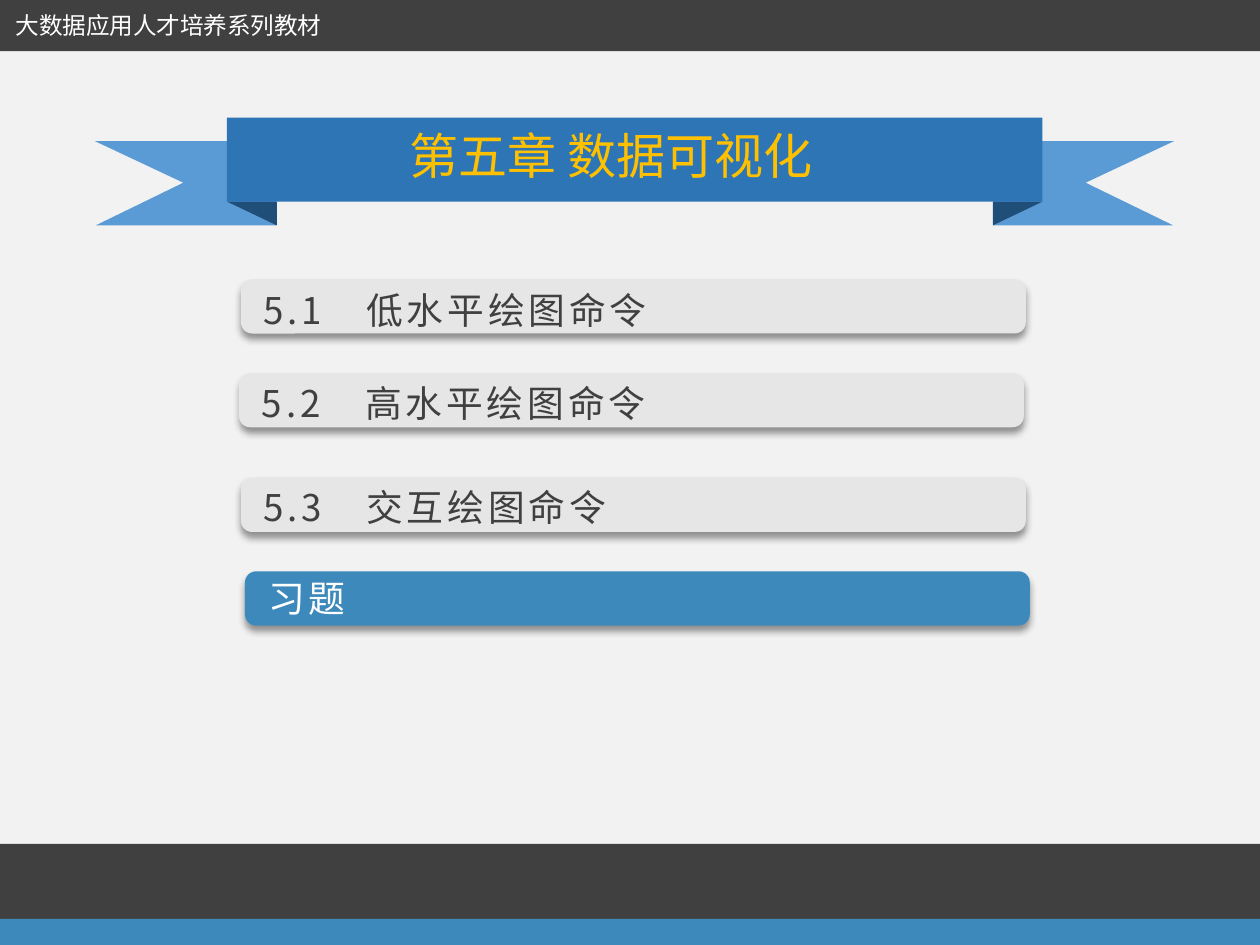
from lxml import etree
from pptx import Presentation
from pptx.dml.color import RGBColor
from pptx.enum.shapes import MSO_SHAPE
from pptx.enum.text import MSO_AUTO_SIZE, PP_ALIGN
from pptx.oxml.ns import qn
from pptx.util import Pt

RECTANGLE = MSO_SHAPE.RECTANGLE
ROUNDED = MSO_SHAPE.ROUNDED_RECTANGLE
TRIANGLE = MSO_SHAPE.RIGHT_TRIANGLE
FIT_TEXT = MSO_AUTO_SIZE.SHAPE_TO_FIT_TEXT
LEFT, CENTER = PP_ALIGN.LEFT, PP_ALIGN.CENTER
FONT = "Noto Sans CJK SC"
DARK, BLUE, GREY, WHITE = "404040", "3D89BC", "E6E6E6", "FFFFFF"


def paint(shape, color):
    shape.shadow.inherit = False
    shape.fill.solid()
    shape.fill.fore_color.rgb = RGBColor.from_string(color)
    shape.line.fill.background()
    return shape


def write(shapes, text, frame, size, color, align, spacing=0):
    box = shapes.add_textbox(*map(Pt, frame))
    box.text_frame.word_wrap = False
    box.text_frame.auto_size = FIT_TEXT
    paragraph = box.text_frame.paragraphs[0]
    paragraph.alignment = align
    run = paragraph.add_run()
    run.text = text
    for name, value in {"name": FONT, "size": Pt(size)}.items():
        setattr(run.font, name, value)
    run.font.color.rgb = RGBColor.from_string(color)
    properties = run.font._element
    etree.SubElement(properties, qn("a:ea"), typeface=FONT)
    if spacing:
        properties.set("spc", str(round(spacing * 100)))


deck = Presentation()
deck.slide_width, deck.slide_height = Pt(720), Pt(540)
slide = deck.slides.add_slide(deck.slide_layouts[6])
slide.background.fill.solid()
slide.background.fill.fore_color.rgb = RGBColor.from_string("F2F2F2")

ribbon = slide.shapes.add_group_shape().shapes
tail = [(54.4, 80.7), (157.7, 80.7), (157.7, 128.8), (54.7, 128.8), (104.8, 104.4)]
ribbon_span = 725.2
for mirrored in (False, True):
    points = [(Pt(ribbon_span - x if mirrored else x), Pt(y)) for x, y in tail]
    outline = ribbon.build_freeform(*points[0])
    outline.add_line_segments(points[1:], close=True)
    paint(outline.convert_to_shape(), "5B9BD5")

for frame, rotation in (((129.7, 115.2, 28.5, 13.6), 180), ((574.75, 107.75, 13.6, 28.5), 90)):
    fold = paint(ribbon.add_shape(TRIANGLE, *map(Pt, frame)), "1F4E79")
    fold.rotation = rotation

paint(ribbon.add_shape(RECTANGLE, Pt(129.7), Pt(67.2), Pt(466), Pt(48)), "2E75B6")
write(ribbon, "第五章 数据可视化", (224.6, 68.4, 249.1, 41), 28, "FFC000", CENTER)

for frame, color in (
    ((-0.7, -0.7, 721.4, 30), DARK),
    ((0, 482.2, 720, 43.2), DARK),
    ((0, 525, 720, 15), BLUE),
):
    paint(slide.shapes.add_shape(RECTANGLE, *map(Pt, frame)), color)
write(slide.shapes, "大数据应用人才培养系列教材", (0.7, 2.9, 191.5, 23.8), 13.5, WHITE, CENTER)

sections = [
    ("5.1　低水平绘图命令", 137.7, 159.6, 143.3, 160.6, 239, GREY, DARK),
    ("5.2　高水平绘图命令", 136.6, 213.2, 142.6, 213.8, 239, GREY, DARK),
    ("5.3　交互绘图命令", 137.7, 273, 143.3, 273.6, 216, GREY, DARK),
    ("习题", 140, 326.5, 146.2, 325.4, 61.2, BLUE, WHITE),
]
shadow_format = {"blurRad": Pt(4), "dist": Pt(3), "dir": 90 * 60000, "algn": "t", "rotWithShape": 0}
for title, bar_left, bar_top, text_left, text_top, text_width, fill, ink in sections:
    section = slide.shapes.add_group_shape().shapes
    bar = paint(section.add_shape(ROUNDED, Pt(bar_left), Pt(bar_top), Pt(448.5), Pt(31)), fill)
    bar.adjustments[0] = 0.207
    effects = bar._element.spPr.find(qn("a:effectLst"))
    shadow = etree.SubElement(effects, qn("a:outerShdw"))
    for name, value in shadow_format.items():
        shadow.set(name, str(value))
    shade = etree.SubElement(shadow, qn("a:srgbClr"), val="000000")
    etree.SubElement(shade, qn("a:alpha"), val="40000")
    write(section, title, (text_left, text_top, text_width, 32.4), 21, ink, LEFT, 2.2)

deck.save("out.pptx")
